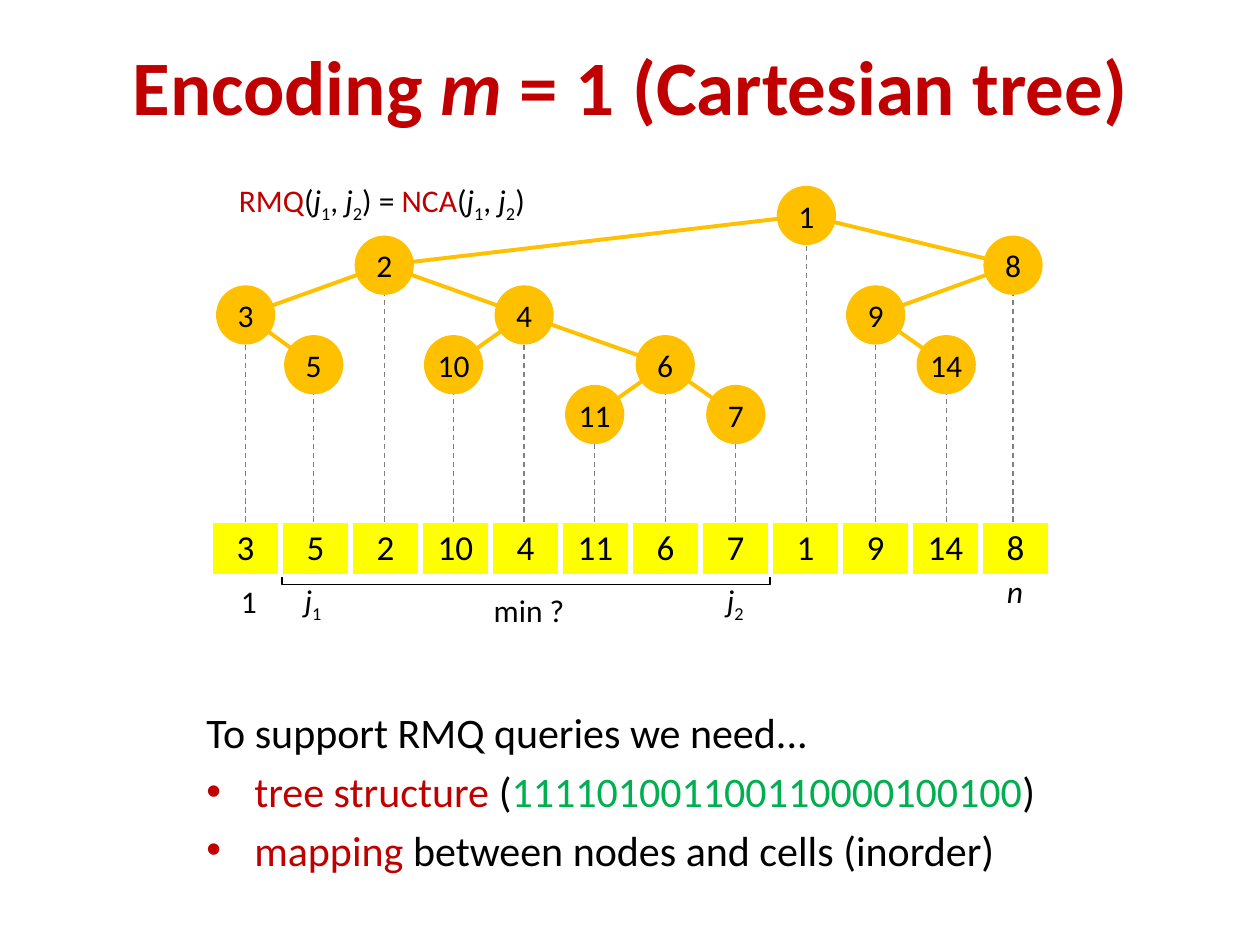
"""Build the slide on encoding range minimum queries with a Cartesian tree."""
from lxml import etree
from pptx import Presentation, util as u
from pptx.dml.color import RGBColor
from pptx.enum import dml, shapes, text
from pptx.oxml import ns

RED, GOLD, GREEN, GREY = "C00000", "FFC000", "00B050", "808080"
BLACK, WHITE, YELLOW = "000000", "FFFFFF", "FFFF00"
MID = text.PP_ALIGN.CENTER
LEFT = text.PP_ALIGN.LEFT


def color(code):
    return RGBColor.from_string(code)


def add(root, tag, **attrs):
    return etree.SubElement(root, ns.qn(tag), attrs)


class Deck:
    def __init__(self):
        self.font = "Calibri"
        self.show = Presentation()
        self.show.slide_width = u.Inches(10)
        self.show.slide_height = u.Inches(7.5)
        self.slide = self.show.slides.add_slide(self.show.slide_layouts[5])
        self.items = self.slide.shapes

    def fill_in(self, para, runs, size, align=MID, bold=None):
        para.alignment = align
        for words, tone, mark in runs:
            run = para.add_run()
            run.text = words
            font = run.font
            font.name, font.size, font.bold = self.font, u.Pt(size), bold
            font.italic = mark == "i"
            font.color.rgb = color(tone)
            if mark == "sub":
                run._r.get_or_add_rPr().set("baseline", "-25000")

    def title(self, box, runs):
        head = self.items.title
        head.left, head.top, head.width, head.height = map(u.Inches, box)
        head.text_frame.vertical_anchor = text.MSO_ANCHOR.MIDDLE
        self.fill_in(head.text_frame.paragraphs[0], runs, 44, bold=True)

    def label(self, box, runs, align=MID):
        frame = self.items.add_textbox(*map(u.Inches, box)).text_frame
        frame.word_wrap = True
        frame.auto_size = text.MSO_AUTO_SIZE.SHAPE_TO_FIT_TEXT
        self.fill_in(frame.paragraphs[0], runs, 18, align)

    def points(self, box, lead, rows):
        frame = self.items.add_textbox(*map(u.Inches, box)).text_frame
        frame.word_wrap = True
        for num, runs in enumerate([lead, *rows]):
            para = frame.add_paragraph() if num else frame.paragraphs[0]
            para.space_before = u.Pt(4.8)
            self.fill_in(para, runs, 24, LEFT)
            if num:
                self.bullet(para)

    def bullet(self, para):
        props = para._p.get_or_add_pPr()
        indent = u.Inches(0.38)
        props.set("marL", str(indent))
        props.set("indent", str(-indent))
        add(add(props, "a:buClr"), "a:srgbClr", val=RED)
        add(props, "a:buFont", typeface="Arial")
        add(props, "a:buChar", char="•")

    def line(self, start, end, tone, width, dash=None):
        link = self.items.add_connector(
            shapes.MSO_CONNECTOR.STRAIGHT, *map(u.Inches, (*start, *end)))
        link.line.color.rgb = color(tone)
        link.line.width = u.Pt(width)
        if dash:
            link.line.dash_style = dash
        add(link._element.spPr, "a:effectLst")

    def node(self, spot, size, key):
        x, y = spot
        ball = self.items.add_shape(
            shapes.MSO_SHAPE.OVAL,
            *map(u.Inches, (x - size / 2, y - size / 2, size, size)))
        ball.shadow.inherit = False
        ball.fill.solid()
        ball.fill.fore_color.rgb = color(GOLD)
        ball.line.fill.background()
        frame = ball.text_frame
        frame.margin_left = frame.margin_right = 0
        frame.vertical_anchor = text.MSO_ANCHOR.MIDDLE
        self.fill_in(frame.paragraphs[0], [(key, BLACK, "")], 18)

    def cells(self, box, keys):
        table = self.items.add_table(1, len(keys), *map(u.Inches, box)).table
        table.first_row = table.horz_banding = False
        for cell, key in zip(table.iter_cells(), keys):
            self.fill_in(cell.text_frame.paragraphs[0], [(key, BLACK, "")], 20)
            props = cell._tc.get_or_add_tcPr()
            for side in ("a:lnL", "a:lnR", "a:lnT", "a:lnB"):
                edge = add(props, side, w=str(u.Pt(3)))
                add(add(edge, "a:solidFill"), "a:srgbClr", val=WHITE)
            cell.fill.solid()
            cell.fill.fore_color.rgb = color(YELLOW)

    def brace(self, left, right, top, base):
        form = self.items.build_freeform(
            u.Inches(left), u.Inches(top), scale=1.0)
        spots = [(left, base), (right, base), (right, top)]
        form.add_line_segments(
            [(u.Inches(x), u.Inches(y)) for x, y in spots], close=False)
        shape = form.convert_to_shape()
        shape.shadow.inherit = False
        shape.fill.background()
        shape.line.color.rgb = color(BLACK)
        shape.line.width = u.Pt(1)


def index(num):
    return [("j", BLACK, "i"), (num, BLACK, "sub")]


def call(name):
    return [(name, RED, ""), ("(", BLACK, ""), *index("1"),
            (", ", BLACK, ""), *index("2")]


def main():
    deck = Deck()
    size, floor = 0.47, 4.14
    tree = [
        ("3", 1.95, 2, "2"), ("5", 2.49, 3, "3"), ("2", 3.05, 1, "1"),
        ("10", 3.6, 3, "4"), ("4", 4.16, 2, "2"), ("11", 4.72, 4, "6"),
        ("6", 5.28, 3, "4"), ("7", 5.84, 4, "6"), ("1", 6.4, 0, None),
        ("9", 6.95, 2, "8"), ("14", 7.51, 3, "9"), ("8", 8.04, 1, "1"),
    ]
    spots = {key: (x, 1.71 + level * 1.58 / 4) for key, x, level, _ in tree}

    for key, _, _, top in tree:
        if top:
            deck.line(spots[key], spots[top], GOLD, 2.25)
    deck.title((0.28, 0.05, 9.45, 1.25), [
        ("Encoding ", RED, ""), ("m", RED, "i"),
        (" = 1 (Cartesian tree)", RED, "")])
    deck.cells((1.67, 4.13, 6.67, 0.41), list(spots))
    for key, (x, y) in spots.items():
        deck.node((x, y), size, key)
        deck.line((x, floor), (x, y + size / 2), GREY, 0.75,
                  dml.MSO_LINE.DASH)

    deck.label((1.69, 1.39, 2.68, 0.4), [
        *call("RMQ"), (") = ", BLACK, ""), *call("NCA"), (")", BLACK, "")])
    for x, y, runs in [
        (1.71, 4.57, [("1", BLACK, "")]), (2.22, 4.56, index("1")),
        (5.57, 4.56, index("2")), (7.79, 4.49, [("n", BLACK, "i")]),
    ]:
        deck.label((x, y, 0.53, 0.4), runs)
    deck.brace(2.24, 6.11, 4.58, 4.64)
    deck.label((3.82, 4.64, 0.79, 0.4), [("min ?", BLACK, "")], LEFT)

    deck.points(
        (1.54, 5.56, 7.23, 1.62),
        [("To support RMQ queries we need...", BLACK, "")],
        [[("tree structure", RED, ""), (" (", BLACK, ""),
          ("111101001100110000100100", GREEN, ""), (")", BLACK, "")],
         [("mapping ", RED, ""),
          ("between nodes and cells (inorder)", BLACK, "")]])
    deck.show.save("out.pptx")


if __name__ == "__main__":
    main()
